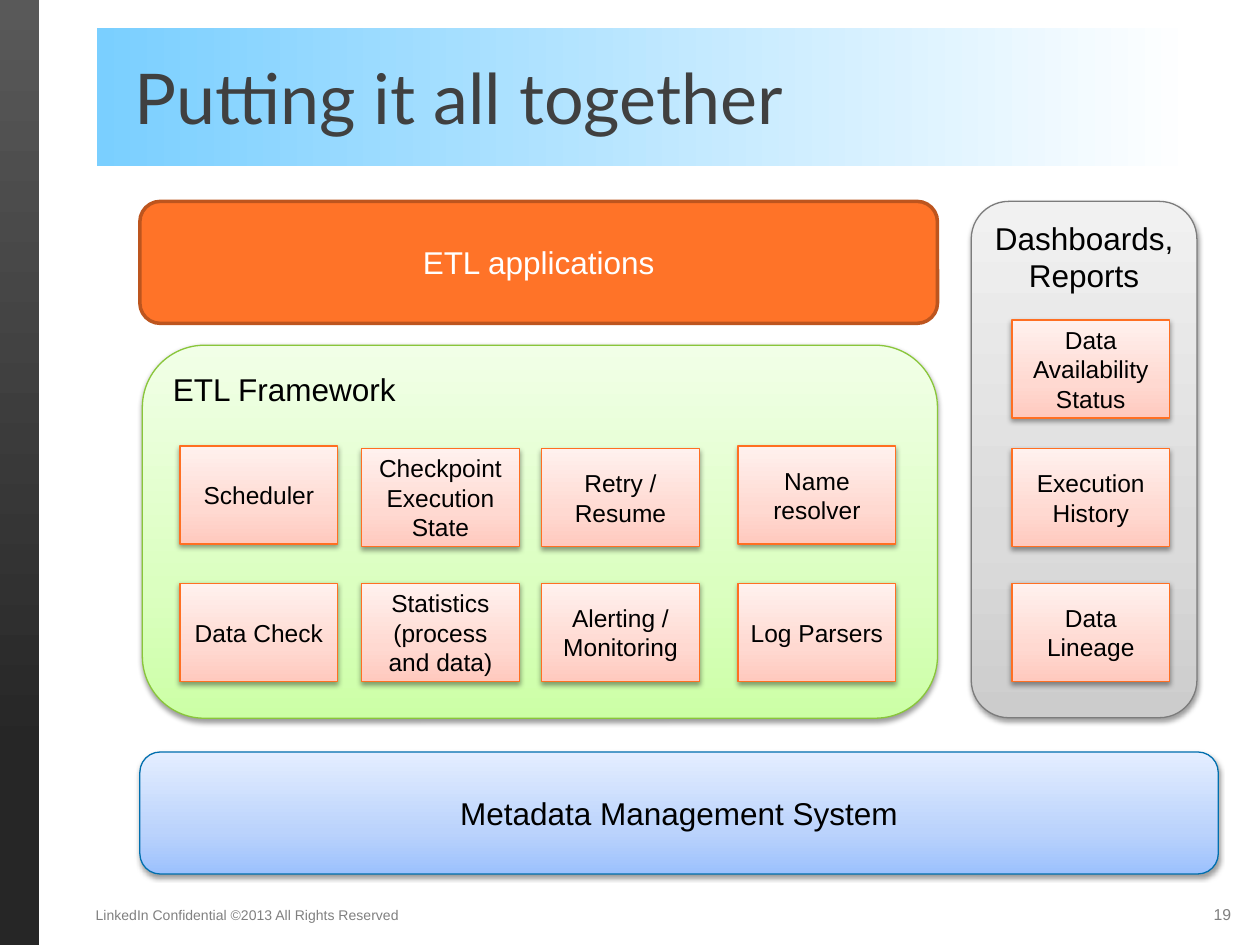
from lxml.etree import SubElement
from pptx import Presentation
from pptx.dml.color import RGBColor
from pptx.enum.shapes import MSO_SHAPE
from pptx.enum.text import MSO_ANCHOR, MSO_AUTO_SIZE, PP_ALIGN
from pptx.oxml.ns import qn
from pptx.util import Cm, Pt

BLACK = RGBColor(0x00, 0x00, 0x00)
WHITE = RGBColor(0xFF, 0xFF, 0xFF)
TITLE_GRAY = RGBColor(0x40, 0x40, 0x40)
FOOTER_GRAY = RGBColor(0x80, 0x80, 0x80)
ORANGE = RGBColor(0xFF, 0x73, 0x28)
DARK_ORANGE = RGBColor(0xBD, 0x55, 0x1E)
TILE_LINE = RGBColor(0xFF, 0x6F, 0x22)
GREEN_LINE = RGBColor(0x89, 0xC6, 0x3A)
BLUE_LINE = RGBColor(0x00, 0x6F, 0xAE)
GRAY_LINE = RGBColor(0x7C, 0x7C, 0x7C)

SIDEBAR_STOPS = [(20, RGBColor(0x26, 0x26, 0x26)), (100, RGBColor(0x59, 0x59, 0x59))]
TITLE_STOPS = [(0, RGBColor(0x7A, 0xCF, 0xFF)), (100, WHITE)]


def three_stops(dark, middle, light):
    return [(0, dark), (35, middle), (100, light)]


TILE_STOPS = three_stops(RGBColor(0xFF, 0xC9, 0xBE), RGBColor(0xFF, 0xD9, 0xD1), RGBColor(0xFF, 0xF1, 0xEE))
GREEN_STOPS = three_stops(RGBColor(0xCC, 0xFF, 0xA6), RGBColor(0xDB, 0xFF, 0xC0), RGBColor(0xF1, 0xFF, 0xE7))
BLUE_STOPS = three_stops(RGBColor(0x9C, 0xC1, 0xFD), RGBColor(0xBB, 0xD3, 0xFC), RGBColor(0xE4, 0xEE, 0xFF))
GRAY_STOPS = three_stops(RGBColor(0xCC, 0xCC, 0xCC), RGBColor(0xDB, 0xDB, 0xDB), RGBColor(0xF1, 0xF1, 0xF1))

TILE_WIDTH, TILE_HEIGHT = 3.18, 1.98
UPPER_ROW, MIDDLE_ROW, LOWER_ROW = 6.45, 9.04, 11.76
RAISED_ROW = 8.99
DASHBOARD_COLUMN = 20.4
FRAMEWORK_TILES = [
    (3.63, RAISED_ROW, "Scheduler", "Data Check"),
    (7.29, MIDDLE_ROW, "Checkpoint Execution State", "Statistics (process and data)"),
    (10.92, MIDDLE_ROW, "Retry / Resume", "Alerting / Monitoring"),
    (14.88, RAISED_ROW, "Name resolver", "Log Parsers"),
]
DASHBOARD_TILES = [
    (UPPER_ROW, "Data Availability Status"),
    (MIDDLE_ROW, "Execution History"),
    (LOWER_ROW, "Data Lineage"),
]


class SlideBuilder:
    body_font = "Arial"
    title_font = "Lato"

    def __init__(self, slide):
        self.slide = slide

    def set_text(self, frame, text, size, color, align, anchor, font=body_font):
        frame.text = text
        frame.word_wrap = True
        frame.auto_size = MSO_AUTO_SIZE.NONE
        frame.vertical_anchor = anchor
        for para in frame.paragraphs:
            para.alignment = align
            for span in para.runs:
                span.font.name = font
                span.font.size = Pt(size)
                span.font.color.rgb = color

    def gradient(self, shape, stops, angle):
        shape.fill.gradient()
        shape.fill.gradient_angle = angle
        stop_list = next(shape.element.spPr.iter(qn("a:gsLst")))
        for old_stop in list(stop_list):
            stop_list.remove(old_stop)
        for position, color in stops:
            stop = SubElement(stop_list, qn("a:gs"), pos=str(position * 1000))
            SubElement(stop, qn("a:srgbClr"), val=str(color))

    def drop_shadow(self, shape):
        effects = shape.element.spPr.find(qn("a:effectLst"))
        shadow = SubElement(effects, qn("a:outerShdw"), blurRad=str(Pt(3.1)),
                            dist=str(Pt(1.6)), dir="5400000", rotWithShape="0")
        color = SubElement(shadow, qn("a:srgbClr"), val=str(BLACK))
        SubElement(color, qn("a:alpha"), val="38000")

    def title(self, text, left, top, width, height):
        title = self.slide.shapes.title
        title.left, title.top, title.width, title.height = Cm(left), Cm(top), Cm(width), Cm(height)
        self.gradient(title, TITLE_STOPS, 0)
        frame = title.text_frame
        self.set_text(frame, text, 40, TITLE_GRAY, PP_ALIGN.LEFT, MSO_ANCHOR.MIDDLE, self.title_font)
        frame.margin_left = frame.margin_right = 0
        properties = frame.paragraphs[0]._p.get_or_add_pPr()
        properties.set("marL", str(Cm(0.76)))
        properties.set("indent", "0")

    def shape(self, kind, left, top, width, height):
        shape = self.slide.shapes.add_shape(kind, Cm(left), Cm(top), Cm(width), Cm(height))
        shape.shadow.inherit = False
        return shape

    def sidebar(self, width, height):
        bar = self.shape(MSO_SHAPE.RECTANGLE, 0, 0, width, height)
        self.gradient(bar, SIDEBAR_STOPS, 90)
        bar.line.fill.background()

    def panel(self, text, left, top, width, height, stops, line,
              kind=MSO_SHAPE.ROUNDED_RECTANGLE, size=18,
              align=PP_ALIGN.CENTER, anchor=MSO_ANCHOR.MIDDLE):
        panel = self.shape(kind, left, top, width, height)
        self.gradient(panel, stops, 90)
        panel.line.color.rgb = line
        panel.line.width = Pt(0.75)
        self.drop_shadow(panel)
        self.set_text(panel.text_frame, text, size, BLACK, align, anchor)
        return panel

    def tile(self, text, left, top):
        tile = self.panel(text, left, top, TILE_WIDTH, TILE_HEIGHT, TILE_STOPS, TILE_LINE,
                          MSO_SHAPE.RECTANGLE, 14)
        tile.text_frame.margin_left = tile.text_frame.margin_right = Cm(0.2)

    def banner(self, text, left, top, width, height):
        banner = self.shape(MSO_SHAPE.ROUNDED_RECTANGLE, left, top, width, height)
        banner.fill.solid()
        banner.fill.fore_color.rgb = ORANGE
        banner.line.color.rgb = DARK_ORANGE
        banner.line.width = Pt(2)
        self.set_text(banner.text_frame, text, 18, WHITE, PP_ALIGN.CENTER, MSO_ANCHOR.MIDDLE)

    def footer(self, text, left, width, size, align):
        box = self.slide.shapes.add_textbox(Cm(left), Cm(17.93), Cm(width), Cm(1.02))
        self.set_text(box.text_frame, text, size, FOOTER_GRAY, align, MSO_ANCHOR.MIDDLE)


def main():
    deck = Presentation()
    deck.slide_width, deck.slide_height = Cm(25.4), Cm(19.05)
    page = SlideBuilder(deck.slides.add_slide(deck.slide_layouts[5]))

    page.sidebar(0.79, 19.05)
    page.title("Putting it all together", 1.96, 0.56, 22.12, 2.79)
    page.banner("ETL applications", 2.82, 4.06, 16.08, 2.46)
    page.panel("ETL Framework", 2.87, 6.96, 16.03, 7.52, GREEN_STOPS, GREEN_LINE,
               align=PP_ALIGN.LEFT, anchor=MSO_ANCHOR.TOP)
    page.panel("Dashboards,\nReports", 19.58, 4.06, 4.55, 10.41, GRAY_STOPS, GRAY_LINE,
               anchor=MSO_ANCHOR.TOP)
    page.panel("Metadata Management System", 2.82, 15.16, 21.74, 2.46, BLUE_STOPS, BLUE_LINE)

    for left, top, upper_text, lower_text in FRAMEWORK_TILES:
        page.tile(upper_text, left, top)
        page.tile(lower_text, left, LOWER_ROW)
    for top, text in DASHBOARD_TILES:
        page.tile(text, DASHBOARD_COLUMN, top)

    page.footer("LinkedIn Confidential ©2013 All Rights Reserved", 1.68, 8.05, 8, PP_ALIGN.LEFT)
    page.footer("19", 19.15, 5.92, 9, PP_ALIGN.RIGHT)
    deck.save("out.pptx")


if __name__ == "__main__":
    main()
